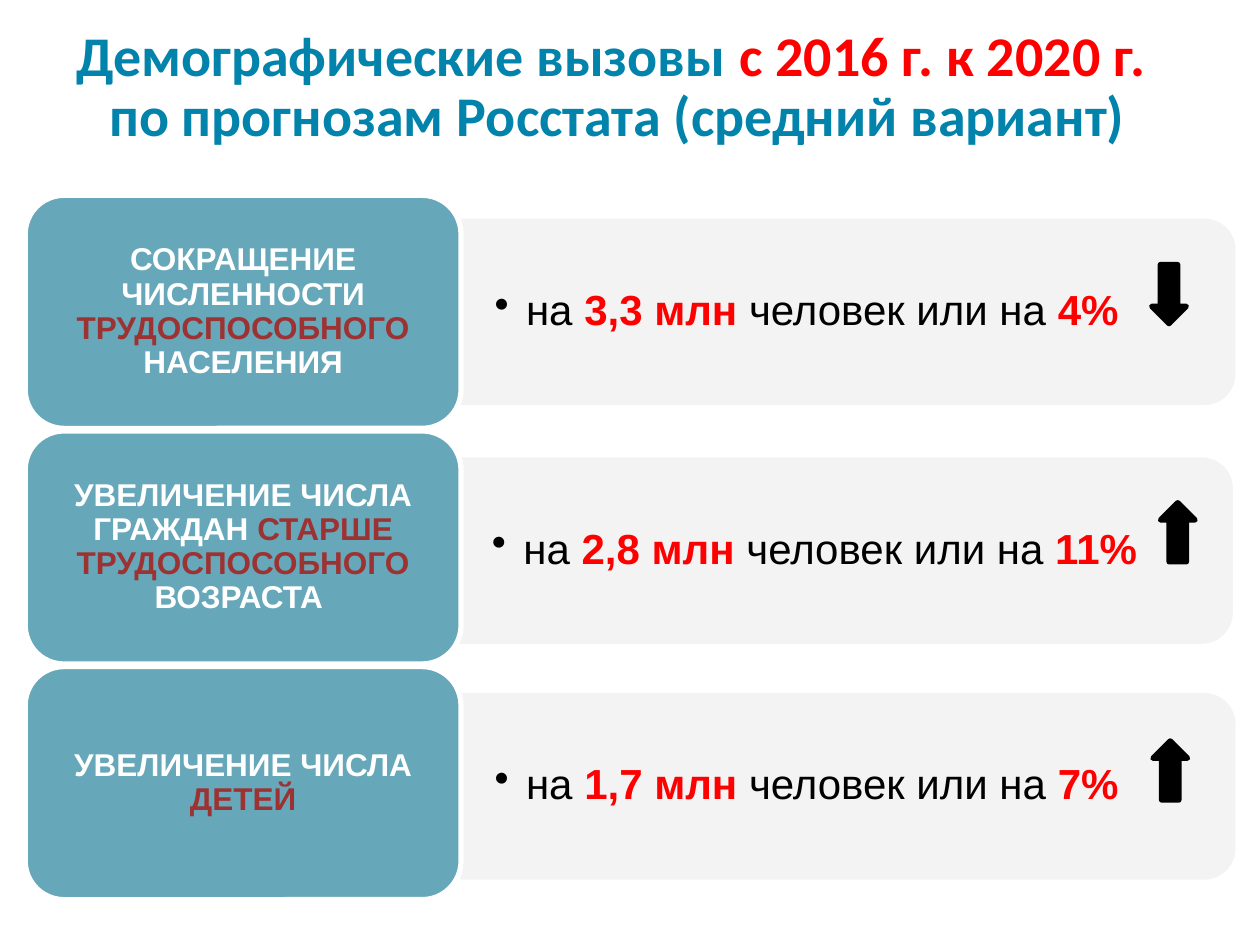
from dataclasses import dataclass

from lxml.etree import SubElement
from pptx import Presentation
from pptx.dml.color import RGBColor
from pptx.enum.shapes import MSO_SHAPE as Preset
from pptx.enum.text import MSO_ANCHOR as Anchor, PP_ALIGN as Align
from pptx.oxml.ns import qn
from pptx.shapes.autoshape import Shape
from pptx.slide import Slide
from pptx.util import Pt


@dataclass(frozen=True)
class Theme:
    title: str = "0183AB"
    accent: str = "FF0000"
    card: str = "66A7B9"
    bar: str = "F2F2F2"
    highlight: str = "9D3232"
    light: str = "FFFFFF"
    dark: str = "000000"
    title_font: str = "Calibri"
    body_font: str = "Arial"
    title_size: float = 32
    card_size: float = 18
    bar_size: float = 24
    line_width: float = 3


@dataclass(frozen=True)
class Span:
    text: str
    color: str
    bold: bool = True


@dataclass(frozen=True)
class Box:
    left: float
    top: float
    width: float
    height: float


@dataclass(frozen=True)
class Challenge:
    heading: list[Span]
    amount: str
    share: str
    bar_center_x: float
    bar_center_y: float
    arrow: Preset
    arrow_left: float


THEME = Theme()
CARD_LEFT, CARD_TOP, CARD_WIDTH, CARD_HEIGHT, CARD_PITCH = 14.4, 111.6, 249.1, 133.2, 134.64
BAR_LENGTH, BAR_THICKNESS = 442.8, 106.56
BAR_TEXT_WIDTH, BAR_TEXT_HEIGHT = 437.8, 96.5
ARROW_TOP, ARROW_WIDTH, ARROW_HEIGHT, ARROW_PITCH = 151.2, 19.8, 33.8, 136.1

CHALLENGES = [
    Challenge(
        [Span("СОКРАЩЕНИЕ ЧИСЛЕННОСТИ ", THEME.light),
         Span("ТРУДОСПОСОБНОГО ", THEME.highlight),
         Span("НАСЕЛЕНИЯ", THEME.light)],
        "3,3 млн ", "4%", 484.6, 178.2, Preset.DOWN_ARROW, 658.1),
    Challenge(
        [Span("УВЕЛИЧЕНИЕ ЧИСЛА ГРАЖДАН ", THEME.light),
         Span("СТАРШЕ ТРУДОСПОСОБНОГО ", THEME.highlight),
         Span("ВОЗРАСТА ", THEME.light)],
        "2,8 млн ", "11%", 483.1, 314.6, Preset.UP_ARROW, 663.1),
    Challenge(
        [Span("УВЕЛИЧЕНИЕ ЧИСЛА ", THEME.light),
         Span("ДЕТЕЙ", THEME.highlight)],
        "1,7 млн ", "7%", 484.6, 449.3, Preset.UP_ARROW, 658.8),
]


def add_preset(slide: Slide, preset: Preset, box: Box, fill: str, line: str | None = None) -> Shape:
    shape = slide.shapes.add_shape(preset, Pt(box.left), Pt(box.top), Pt(box.width), Pt(box.height))
    shape.shadow.inherit = False
    shape.fill.solid()
    shape.fill.fore_color.rgb = RGBColor.from_string(fill)
    if line is None:
        shape.line.fill.background()
    else:
        shape.line.color.rgb = RGBColor.from_string(line)
        shape.line.width = Pt(THEME.line_width)
    return shape


def write(shape: Shape, lines: list[list[Span]], font: str, size: float, anchor: Anchor,
          align: Align, insets: tuple[float, float, float, float]) -> None:
    frame = shape.text_frame
    frame.word_wrap = True
    frame.vertical_anchor = anchor
    frame.margin_left, frame.margin_top, frame.margin_right, frame.margin_bottom = map(Pt, insets)
    paragraph = frame.paragraphs[0]
    paragraph.alignment = align
    paragraph.line_spacing = 0.9
    for index, spans in enumerate(lines):
        if index:
            paragraph.add_line_break()
        for span in spans:
            run = paragraph.add_run()
            run.text = span.text
            run.font.name = font
            run.font.size = Pt(size)
            run.font.bold = span.bold
            run.font.color.rgb = RGBColor.from_string(span.color)


def add_text_box(slide: Slide, box: Box) -> Shape:
    return slide.shapes.add_textbox(Pt(box.left), Pt(box.top), Pt(box.width), Pt(box.height))


def add_bullet(shape: Shape, indent: float) -> None:
    properties = shape.text_frame.paragraphs[0]._p.get_or_add_pPr()
    properties.set("marL", str(Pt(indent)))
    properties.set("indent", str(-Pt(indent)))
    SubElement(properties, qn("a:buChar")).set("char", "•")


def add_bar(slide: Slide, challenge: Challenge) -> None:
    x, y = challenge.bar_center_x, challenge.bar_center_y
    bar = add_preset(slide, Preset.ROUND_2_SAME_RECTANGLE,
                     Box(x - BAR_THICKNESS / 2, y - BAR_LENGTH / 2, BAR_THICKNESS, BAR_LENGTH), THEME.bar)
    bar.rotation = 90
    color = bar.fill._xPr.find(qn("a:solidFill"))[0]
    SubElement(color, qn("a:alpha")).set("val", "90000")
    label = add_text_box(slide, Box(x - BAR_LENGTH / 2, y - BAR_TEXT_HEIGHT / 2,
                                    BAR_TEXT_WIDTH, BAR_TEXT_HEIGHT))
    spans = [Span("на ", THEME.dark, False), Span(challenge.amount, THEME.accent),
             Span("человек или на ", THEME.dark, False), Span(challenge.share, THEME.accent)]
    write(label, [spans], THEME.body_font, THEME.bar_size, Anchor.MIDDLE, Align.LEFT,
          (19.4, 10, 19.4, 10))
    add_bullet(label, 18)


def add_card(slide: Slide, challenge: Challenge, row: int) -> None:
    box = Box(CARD_LEFT, CARD_TOP + row * CARD_PITCH, CARD_WIDTH, CARD_HEIGHT)
    card = add_preset(slide, Preset.ROUNDED_RECTANGLE, box, THEME.card, THEME.light)
    write(card, [challenge.heading], THEME.body_font, THEME.card_size, Anchor.MIDDLE, Align.CENTER,
          (5, 3, 5, 3))


def add_arrow(slide: Slide, challenge: Challenge, row: int) -> None:
    box = Box(challenge.arrow_left, ARROW_TOP + row * ARROW_PITCH, ARROW_WIDTH, ARROW_HEIGHT)
    add_preset(slide, challenge.arrow, box, THEME.dark, THEME.dark)


def add_title(slide: Slide) -> None:
    title = add_text_box(slide, Box(13, 9.4, 694, 79.2))
    lines = [[Span("Демографические вызовы ", THEME.title), Span("с 2016 г. к 2020 г. ", THEME.accent)],
             [Span("по прогнозам Росстата (средний вариант)", THEME.title)]]
    write(title, lines, THEME.title_font, THEME.title_size, Anchor.BOTTOM, Align.CENTER,
          (3.6, 3.6, 18, 3.6))


def main() -> None:
    """Build the slide of demographic challenges."""
    presentation = Presentation()
    presentation.slide_width, presentation.slide_height = Pt(720), Pt(540)
    slide = presentation.slides.add_slide(presentation.slide_layouts[6])
    for row, challenge in enumerate(CHALLENGES):
        add_bar(slide, challenge)
        add_card(slide, challenge, row)
    add_title(slide)
    for row, challenge in enumerate(CHALLENGES):
        add_arrow(slide, challenge, row)
    presentation.save("out.pptx")


if __name__ == "__main__":
    main()
